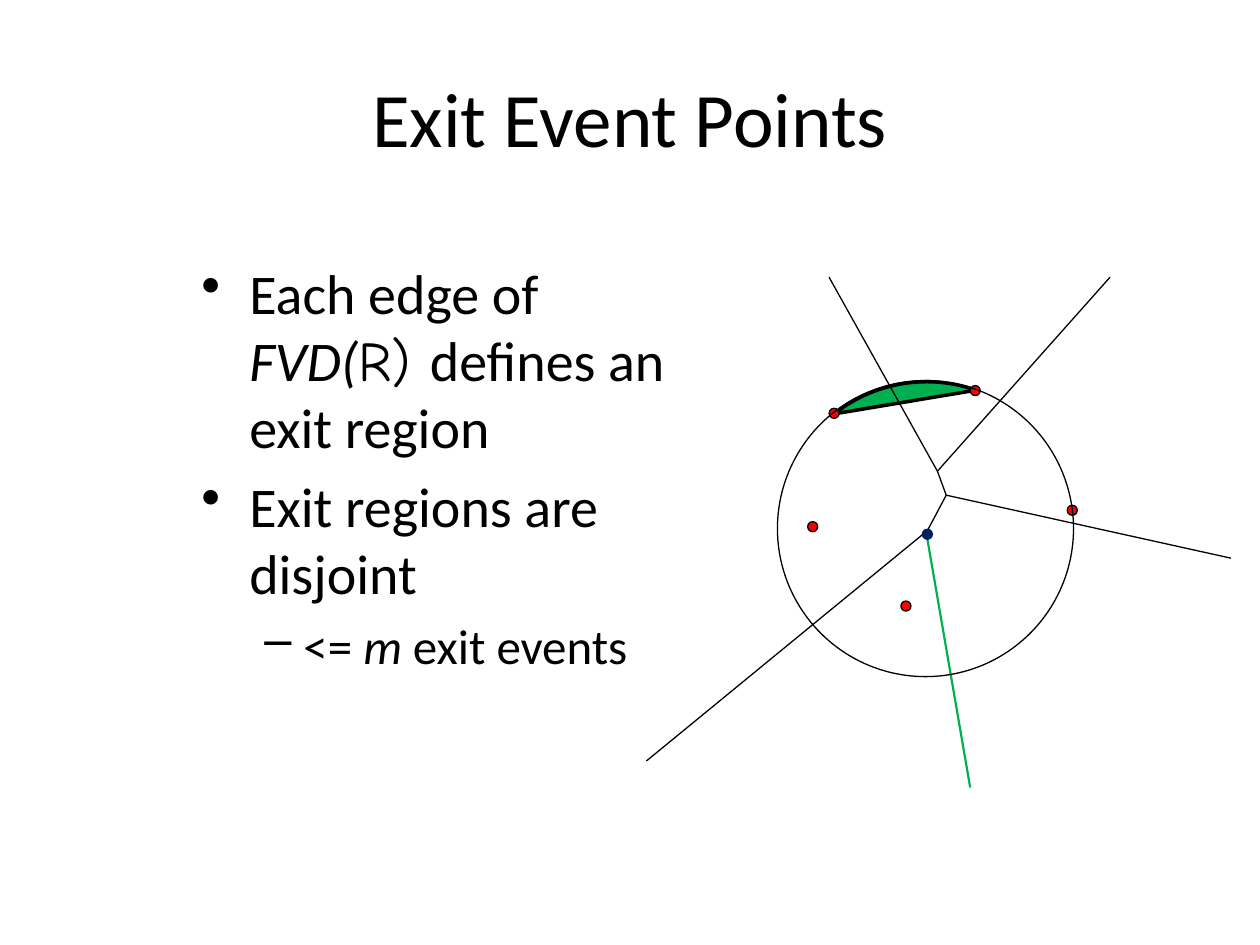
"""Build the Exit Event Points slide."""
from typing import NamedTuple

from lxml import etree
from pptx import Presentation
from pptx.dml.color import RGBColor
from pptx.enum.shapes import MSO_CONNECTOR, MSO_SHAPE
from pptx.enum.text import MSO_ANCHOR, PP_ALIGN
from pptx.oxml.ns import qn
from pptx.util import Inches, Pt

LINE, OVAL, CHORD = MSO_CONNECTOR.STRAIGHT, MSO_SHAPE.OVAL, MSO_SHAPE.CHORD
MIDDLE, CENTER = MSO_ANCHOR.MIDDLE, PP_ALIGN.CENTER
BLACK = RGBColor(0x00, 0x00, 0x00)
GREEN = RGBColor(0x00, 0xB0, 0x50)
RED = RGBColor(0xFF, 0x00, 0x00)
NAVY = RGBColor(0x00, 0x20, 0x60)
FONT, SET_FONT = "Calibri", "Comic Neue"
DOT = 0.08


class Edge(NamedTuple):
    start: tuple
    end: tuple
    color: RGBColor = BLACK
    width: float = 0.75


class Dot(NamedTuple):
    left: float
    top: float
    fill: RGBColor = RED
    outline: RGBColor = BLACK


class Run(NamedTuple):
    text: str
    italic: bool = False
    font: str = FONT


class Bullet(NamedTuple):
    runs: list
    size: int = 32
    char: str = "•"
    margin: float = 0.38
    hang: float = 0.38


APEX, JOINT, CENTRE = (7.44, 3.74), (7.51, 3.93), (7.35, 4.22)
CHORD_EDGE = Edge((6.61, 3.28), (7.74, 3.1), width=1)
EDGES = [
    Edge((6.58, 2.2), APEX),
    Edge(APEX, (8.81, 2.2)),
    Edge(CENTRE, (5.13, 6.04)),
    Edge(CENTRE, (7.7, 6.25), GREEN, 1.25),
    Edge(JOINT, (7.34, 4.25)),
    Edge(JOINT, (9.77, 4.43)),
    Edge(JOINT, APEX),
]
DOTS = [
    Dot(6.41, 4.14),
    Dot(7.15, 4.77),
    Dot(8.47, 4.01),
    Dot(6.58, 3.24),
    Dot(7.7, 3.06),
    Dot(7.32, 4.2, NAVY, NAVY),
]
BULLETS = [
    Bullet([Run("Each edge of "), Run("FVD(", True), Run("R) ", font=SET_FONT),
            Run("defines an exit region")]),
    Bullet([Run("Exit regions are disjoint")]),
    Bullet([Run("<= "), Run("m", True), Run(" exit events")], 28, "–", 0.81, 0.31),
]


def add_edge(s, edge: Edge) -> None:
    """Draw a straight line without a shadow."""
    c = s.shapes.add_connector(LINE, *map(Inches, edge.start + edge.end))
    c.line.color.rgb = edge.color
    c.line.width = Pt(edge.width)
    etree.SubElement(c._element.spPr, qn("a:effectLst"))


def add_round(s, kind, left: float, top: float, size: float, fill=None,
              outline=BLACK, width: float = 0.75):
    """Draw a shape in a square box, unfilled when no fill is given."""
    sp = s.shapes.add_shape(kind, *map(Inches, (left, top, size, size)))
    sp.shadow.inherit = False
    if fill is None:
        sp.fill.background()
    else:
        sp.fill.solid()
        sp.fill.fore_color.rgb = fill
    sp.line.color.rgb = outline
    sp.line.width = Pt(width)
    return sp


def add_text_frame(s, left: float, top: float, width: float, height: float):
    """Add a wrapping text box and return its frame."""
    tf = s.shapes.add_textbox(*map(Inches, (left, top, width, height))).text_frame
    tf.word_wrap = True
    return tf


def write_bullet(p, bullet: Bullet) -> None:
    """Fill a paragraph with a hanging bullet and its runs."""
    p.font.size = Pt(bullet.size)
    p.font.color.rgb = BLACK
    p.space_before = Pt(bullet.size * 0.2)
    pPr = p._p.get_or_add_pPr()
    pPr.set("marL", str(Inches(bullet.margin)))
    pPr.set("indent", str(-Inches(bullet.hang)))
    mark = etree.Element(qn("a:buChar"), char=bullet.char)
    pPr.find(qn("a:defRPr")).addprevious(mark)
    for run in bullet.runs:
        r = p.add_run()
        r.text = run.text
        r.font.size = Pt(bullet.size)
        r.font.name = run.font
        r.font.italic = run.italic
        r.font.color.rgb = BLACK


def main() -> None:
    """Build and save the slide."""
    prs = Presentation()
    prs.slide_width, prs.slide_height = Inches(10), Inches(7.5)
    s = prs.slides.add_slide(prs.slide_layouts[6])

    region = add_round(s, CHORD, 6.17, 3.03, 2.37, GREEN, width=2)
    region.adjustments[0], region.adjustments[1] = 138.99, 173.62
    add_edge(s, CHORD_EDGE)

    tf = add_text_frame(s, 0.5, 0.3, 9, 1.25)
    tf.vertical_anchor = MIDDLE
    p = tf.paragraphs[0]
    p.text = "Exit Event Points"
    p.alignment = CENTER
    p.font.size, p.font.name = Pt(44), FONT
    p.font.color.rgb = BLACK

    tf = add_text_frame(s, 1.5, 2, 4.05, 4.5)
    for i, bullet in enumerate(BULLETS):
        write_bullet(tf.add_paragraph() if i else tf.paragraphs[0], bullet)

    for edge in EDGES:
        add_edge(s, edge)
    for dot in DOTS:
        add_round(s, OVAL, dot.left, dot.top, DOT, dot.fill, dot.outline)
    add_round(s, OVAL, 6.17, 3.02, 2.35)

    prs.save("out.pptx")


if __name__ == "__main__":
    main()
